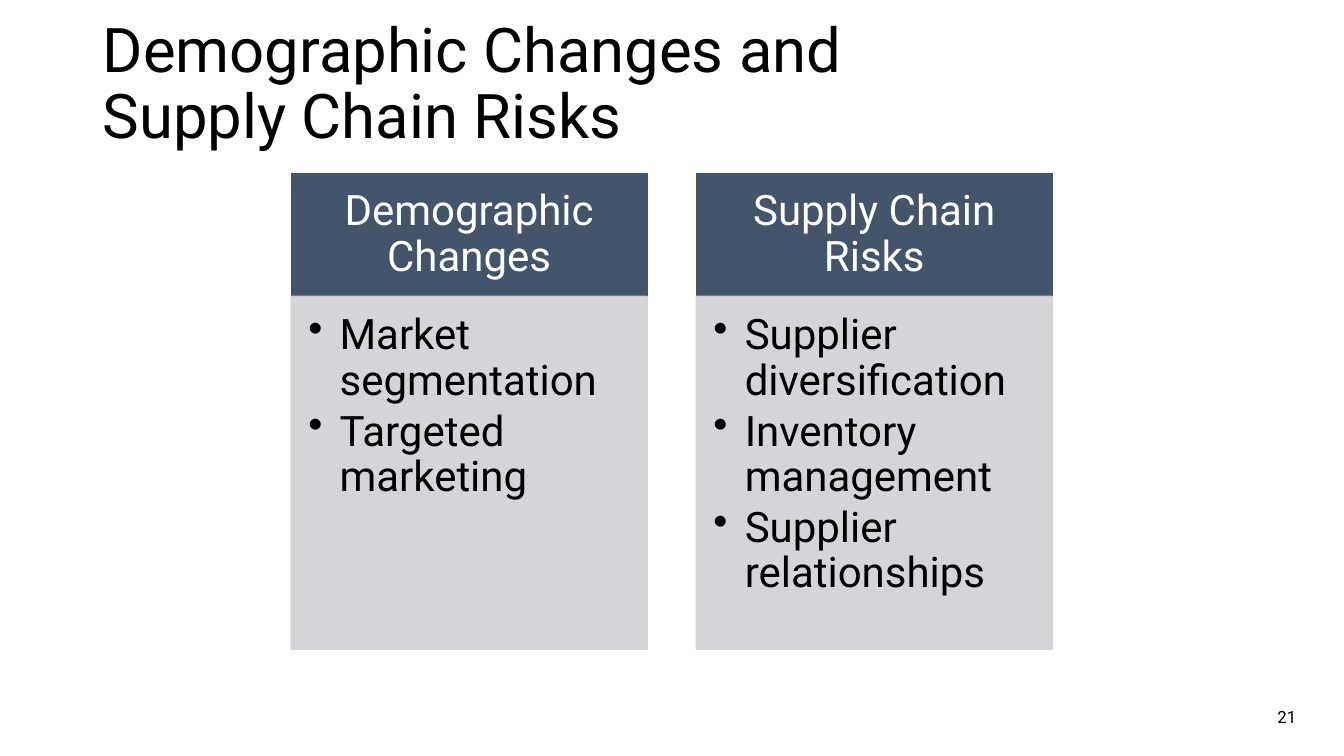
from dataclasses import dataclass

from lxml import etree
from pptx import Presentation
from pptx.dml.color import RGBColor
from pptx.enum import shapes, text
from pptx.oxml.ns import qn
from pptx.util import Cm, Pt

TITLE = ["Demographic Changes and", "Supply Chain Risks"]
COLUMNS = [
    ("Demographic Changes", ["Market segmentation", "Targeted marketing"]),
    ("Supply Chain Risks", ["Supplier diversification", "Inventory management",
                            "Supplier relationships"]),
]
PAGE = "21"


@dataclass(frozen=True)
class Theme:
    font: str = "Roboto"
    ink: str = "000000"
    light: str = "FFFFFF"
    header: str = "44546A"
    body: str = "CFD1D4"
    body_opacity: int = 90
    title_size: int = 44
    column_size: int = 30
    page_size: int = 12


T = Theme()
LEFT, TOP, WIDTH, GAP = 7.34, 4.37, 8.97, 1.24
HEADER_H, BODY_H = 3.1, 8.89
HANG = Cm(0.79)


def add_run(p, words, size, color):
    r = p.add_run()
    r.text = words
    r.font.name = T.font
    r.font.size = Pt(size)
    r.font.color.rgb = RGBColor.from_string(color)


def set_frame(tf, anchor, margins):
    """Margins are left, top, right, bottom in centimetres."""
    tf.word_wrap = True
    tf.auto_size = text.MSO_AUTO_SIZE.NONE
    tf.vertical_anchor = anchor
    tf.margin_left, tf.margin_top, tf.margin_right, tf.margin_bottom = map(Cm, margins)


def add_bullet(p):
    pPr = p._p.get_or_add_pPr()
    pPr.set("marL", str(HANG))
    pPr.set("indent", str(-HANG))
    etree.SubElement(pPr, qn("a:buChar")).set("char", "•")


def add_panel(s, x, y, h, color, opacity=100):
    sp = s.shapes.add_shape(shapes.MSO_SHAPE.RECTANGLE, Cm(x), Cm(y), Cm(WIDTH), Cm(h))
    sp.shadow.inherit = False
    sp.line.width = Pt(1)
    for fill in (sp.fill, sp.line.fill):
        fill.solid()
        fill.fore_color.rgb = RGBColor.from_string(color)
    if opacity < 100:
        for clr in sp._element.spPr.iter(qn("a:srgbClr")):
            etree.SubElement(clr, qn("a:alpha")).set("val", str(opacity * 1000))
    return sp.text_frame


def add_column(s, x, heading, items):
    tf = add_panel(s, x, TOP, HEADER_H, T.header)
    set_frame(tf, text.MSO_ANCHOR.MIDDLE, (0.58, 0.33, 0.58, 0.33))
    p = tf.paragraphs[0]
    p.alignment = text.PP_ALIGN.CENTER
    p.line_spacing = 0.9
    add_run(p, heading, T.column_size, T.light)

    tf = add_panel(s, x, TOP + HEADER_H, BODY_H, T.body, T.body_opacity)
    set_frame(tf, text.MSO_ANCHOR.TOP, (0.43, 0.43, 0.58, 0.66))
    for i, item in enumerate(items):
        p = tf.add_paragraph() if i else tf.paragraphs[0]
        add_bullet(p)
        p.alignment = text.PP_ALIGN.LEFT
        p.line_spacing = 0.9
        p.space_after = Pt(4)
        add_run(p, item, T.column_size, T.ink)


def add_title(s):
    sp = s.shapes.title
    sp.left, sp.top, sp.width, sp.height = Cm(2.34), Cm(0), Cm(29.21), Cm(3.96)
    set_frame(sp.text_frame, text.MSO_ANCHOR.BOTTOM, (0.25, 0.13, 0.25, 0.13))
    p = sp.text_frame.paragraphs[0]
    p.alignment = text.PP_ALIGN.LEFT
    p.line_spacing = 0.9
    for i, line in enumerate(TITLE):
        if i:
            p.add_line_break()
        add_run(p, line, T.title_size, T.ink)


def add_page_number(s):
    tf = s.shapes.add_textbox(Cm(25.3), Cm(17.55), Cm(7.62), Cm(1.02)).text_frame
    set_frame(tf, text.MSO_ANCHOR.MIDDLE, (0.25, 0.13, 0.25, 0.13))
    p = tf.paragraphs[0]
    p.alignment = text.PP_ALIGN.RIGHT
    add_run(p, PAGE, T.page_size, T.ink)


def main():
    prs = Presentation()
    prs.slide_width, prs.slide_height = Cm(33.87), Cm(19.05)
    s = prs.slides.add_slide(prs.slide_layouts[5])
    add_title(s)
    for i, (heading, items) in enumerate(COLUMNS):
        add_column(s, LEFT + i * (WIDTH + GAP), heading, items)
    add_page_number(s)
    prs.save("out.pptx")


if __name__ == "__main__":
    main()
